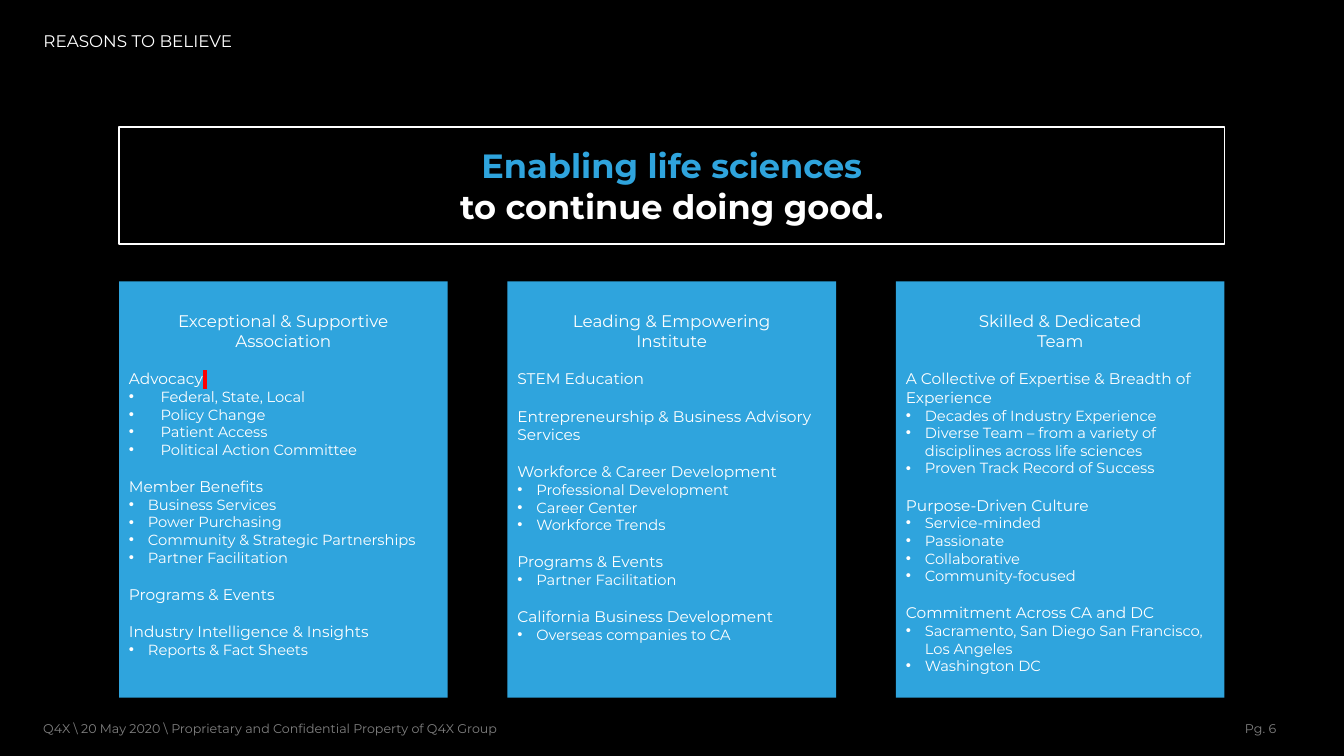
from dataclasses import dataclass

from lxml.etree import SubElement
from pptx import Presentation
from pptx.dml.color import RGBColor
from pptx.enum.shapes import MSO_SHAPE
from pptx.enum.text import MSO_ANCHOR, MSO_AUTO_SIZE, PP_ALIGN
from pptx.oxml.ns import qn
from pptx.util import Cm, Pt

FONT = "Montserrat"
BLUE, WHITE, BLACK, GRAY, RED = "2FA4DD", "FFFFFF", "000000", "808080", "FF0000"
LEFT, WIDTH, CARD = 3.0, 27.86, 8.28
GAP = 13.4


@dataclass
class Topic:
    name: str
    points: tuple[str, ...] = ()
    indent: float = 0.48
    mark: str = ""


@dataclass
class Column:
    head: tuple[str, str]
    topics: tuple[Topic, ...]


COLUMNS = (
    Column(("Exceptional & Supportive", "Association"), (
        Topic("Advocacy", ("Federal, State, Local", "Policy Change", "Patient Access",
                           "Political Action Committee"), 0.8, RED),
        Topic("Member Benefits", ("Business Services", "Power Purchasing",
                                  "Community & Strategic Partnerships",
                                  "Partner Facilitation")),
        Topic("Programs & Events"),
        Topic("Industry Intelligence & Insights", ("Reports & Fact Sheets",)),
    )),
    Column(("Leading & Empowering", "Institute"), (
        Topic("STEM Education"),
        Topic("Entrepreneurship & Business Advisory Services"),
        Topic("Workforce & Career Development", ("Professional Development",
                                                 "Career Center", "Workforce Trends")),
        Topic("Programs & Events", ("Partner Facilitation",)),
        Topic("California Business Development", ("Overseas companies to CA",)),
    )),
    Column(("Skilled & Dedicated", "Team"), (
        Topic("A Collective of Expertise & Breadth of Experience", (
            "Decades of Industry Experience",
            "Diverse Team – from a variety of disciplines across life sciences",
            "Proven Track Record of Success")),
        Topic("Purpose-Driven Culture", ("Service-minded", "Passionate",
                                         "Collaborative", "Community-focused")),
        Topic("Commitment Across CA and DC", (
            "Sacramento, San Diego San Francisco, Los Angeles", "Washington DC")),
    )),
)


def color(code: str) -> RGBColor:
    return RGBColor.from_string(code)


def style(para, size: float, code: str = WHITE, align=PP_ALIGN.LEFT, bold: bool = False) -> None:
    para.alignment = align
    for run in para.runs:
        font = run.font
        font.size, font.name, font.bold = Pt(size), FONT, bold
        font.color.rgb = color(code)


def add_line(frame, text: str):
    para = frame.paragraphs[0]
    if para.runs:
        para = frame.add_paragraph()
    para.text = text
    return para


def add_bullet(para, indent: float) -> None:
    props = para._p.get_or_add_pPr()
    props.set("marL", str(Cm(indent)))
    props.set("indent", str(-Cm(indent)))
    SubElement(props, qn("a:buFont")).set("typeface", "Arial")
    SubElement(props, qn("a:buChar")).set("char", "•")


def add_mark(para, code: str) -> None:
    run = para.add_run()
    run.text = " "
    style(para, 11)
    props = run.font._element
    glow = props.makeelement(qn("a:highlight"), {})
    SubElement(glow, qn("a:srgbClr")).set("val", code)
    props.find(qn("a:solidFill")).addnext(glow)


def add_box(slide, left: float, top: float, width: float, height: float, fill: str):
    box = slide.shapes.add_shape(MSO_SHAPE.RECTANGLE, Cm(left), Cm(top), Cm(width), Cm(height))
    box.shadow.inherit = False
    box.fill.solid()
    box.fill.fore_color.rgb = color(fill)
    box.line.fill.background()
    box.text_frame.word_wrap = True
    return box


def add_card(slide, left: float, column: Column) -> None:
    frame = add_box(slide, left, 7.09, CARD, 10.49, BLUE).text_frame
    frame.vertical_anchor = MSO_ANCHOR.TOP
    frame.margin_top = Cm(0.73)
    for text in column.head:
        style(add_line(frame, text), 12, align=PP_ALIGN.CENTER)
    for topic in column.topics:
        para = add_line(frame, topic.name)
        para.space_before = Pt(GAP)
        style(para, 11)
        if topic.mark:
            add_mark(para, topic.mark)
        for text in topic.points:
            para = add_line(frame, text)
            style(para, 10.5)
            add_bullet(para, topic.indent)


def add_banner(slide) -> None:
    box = add_box(slide, LEFT, 3.2, WIDTH, 2.95, BLACK)
    box.line.color.rgb = color(WHITE)
    box.line.width = Pt(1)
    frame = box.text_frame
    frame.vertical_anchor = MSO_ANCHOR.MIDDLE
    for text, code in (("Enabling life sciences", BLUE), ("to continue doing good.", WHITE)):
        style(add_line(frame, text), 24, code, PP_ALIGN.CENTER, True)


def add_note(slide, left: float, width: float, text: str, align) -> None:
    frame = slide.shapes.add_textbox(Cm(left), Cm(18.03), Cm(width), Cm(0.64)).text_frame
    frame.word_wrap = True
    frame.margin_left = frame.margin_right = 0
    style(add_line(frame, text), 9, GRAY, align)


def set_title(slide, text: str) -> None:
    title = slide.shapes.title
    title.left, title.top, title.width, title.height = Cm(0.84), Cm(0.64), Cm(7.2), Cm(0.86)
    frame = title.text_frame
    frame.text = text
    frame.word_wrap = True
    frame.auto_size = MSO_AUTO_SIZE.NONE
    frame.vertical_anchor = MSO_ANCHOR.TOP
    style(frame.paragraphs[0], 12)


def main() -> None:
    deck = Presentation()
    deck.slide_width, deck.slide_height = Cm(33.87), Cm(19.05)
    slide = deck.slides.add_slide(deck.slide_layouts[5])
    slide.background.fill.solid()
    slide.background.fill.fore_color.rgb = color(BLACK)
    set_title(slide, "REASONS TO BELIEVE")
    add_banner(slide)
    step = (WIDTH - CARD) / (len(COLUMNS) - 1)
    for index, column in enumerate(COLUMNS):
        add_card(slide, LEFT + index * step, column)
    add_note(slide, 1.09, 15.2,
             "Q4X \\ 20 May 2020 \\ Proprietary and Confidential Property of Q4X Group",
             PP_ALIGN.LEFT)
    add_note(slide, 23.85, 8.31, "Pg. 6", PP_ALIGN.RIGHT)
    deck.save("out.pptx")


if __name__ == "__main__":
    main()
